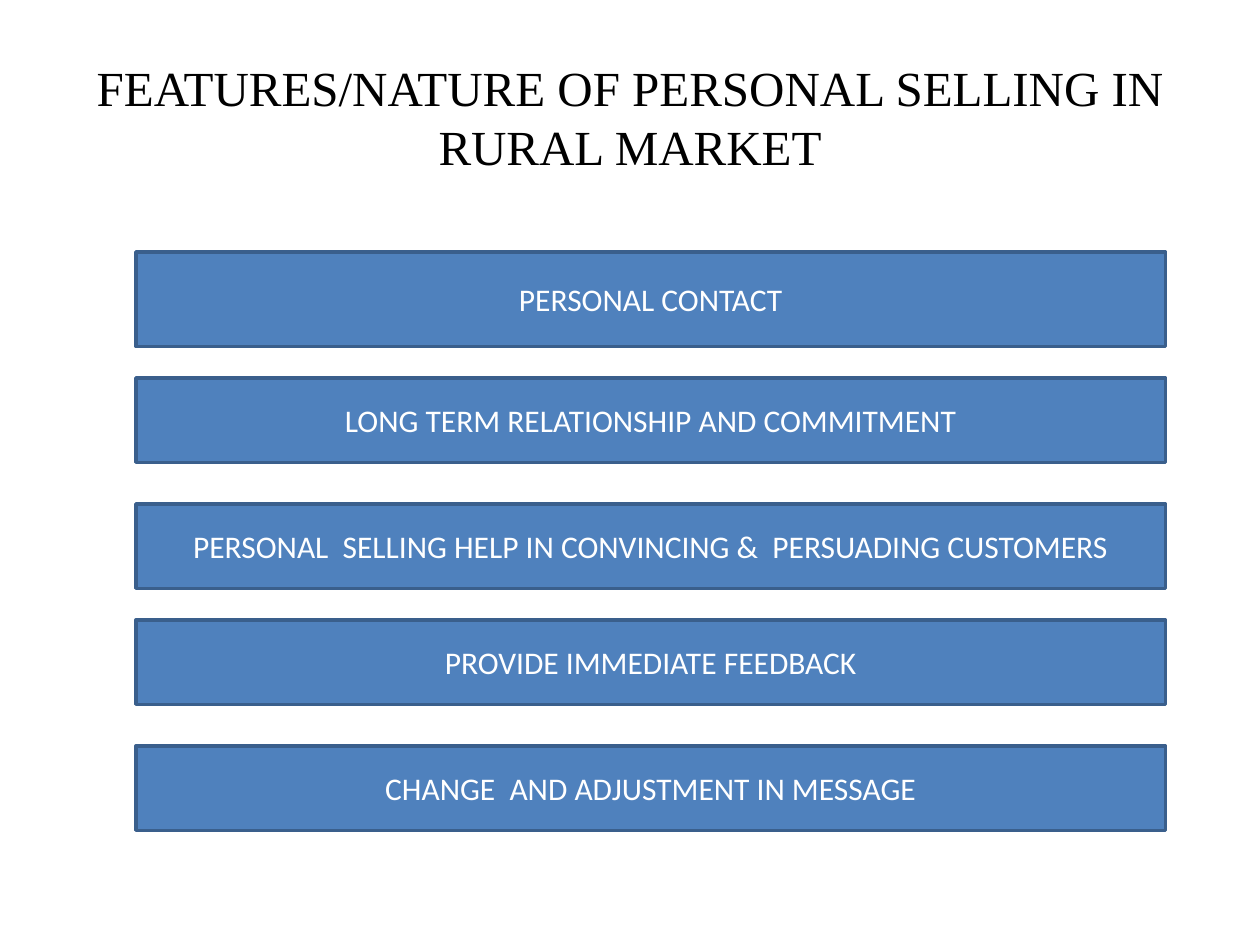
from dataclasses import dataclass

from pptx import Presentation
from pptx.dml.color import RGBColor
from pptx.enum.shapes import MSO_SHAPE as Shape
from pptx.enum.text import MSO_ANCHOR as Anchor, PP_ALIGN as Align
from pptx.slide import Slide
from pptx.util import Inches, Pt


def colour(value):
    return RGBColor.from_string(value)


@dataclass
class FeatureSlide:
    slide: Slide
    title_font: str = "Times New Roman"
    title_size: int = 28
    title_colour: str = "000000"
    bar_font: str = "Calibri"
    bar_size: int = 18
    bar_text: str = "FFFFFF"
    bar_fill: str = "4F81BD"
    bar_line: str = "3A5F8C"

    def label(self, holder, text, font, size, ink):
        frame = holder.text_frame
        frame.word_wrap = True
        frame.vertical_anchor = Anchor.MIDDLE
        paragraph = frame.paragraphs[0]
        paragraph.text = text
        paragraph.alignment = Align.CENTER
        paragraph.font.name = font
        paragraph.font.size = Pt(size)
        paragraph.font.color.rgb = colour(ink)

    def title(self, text, left, top, width, height):
        heading = self.slide.shapes.add_textbox(
            Inches(left), Inches(top), Inches(width), Inches(height))
        self.label(heading, text, self.title_font, self.title_size, self.title_colour)

    def bar(self, text, left, top, width, height):
        feature = self.slide.shapes.add_shape(
            Shape.RECTANGLE, Inches(left), Inches(top), Inches(width), Inches(height))
        feature.shadow.inherit = False
        feature.fill.solid()
        feature.fill.fore_color.rgb = colour(self.bar_fill)
        feature.line.color.rgb = colour(self.bar_line)
        feature.line.width = Pt(2)
        self.label(feature, text, self.bar_font, self.bar_size, self.bar_text)


FEATURES = [
    ("PERSONAL CONTACT", 2, 0.75),
    ("LONG TERM RELATIONSHIP AND COMMITMENT", 3, 0.67),
    ("PERSONAL  SELLING HELP IN CONVINCING &  PERSUADING CUSTOMERS", 4, 0.67),
    ("PROVIDE IMMEDIATE FEEDBACK", 4.92, 0.67),
    ("CHANGE  AND ADJUSTMENT IN MESSAGE", 5.92, 0.67),
]


def main():
    deck = Presentation()
    deck.slide_width, deck.slide_height = Inches(10), Inches(7.5)
    page = FeatureSlide(deck.slides.add_slide(deck.slide_layouts[6]))
    page.title("FEATURES/NATURE OF PERSONAL SELLING IN RURAL MARKET", 0.5, 0.3, 9, 1.25)
    for feature, top, height in FEATURES:
        page.bar(feature, 1.08, top, 8.17, height)
    deck.save("out.pptx")


if __name__ == "__main__":
    main()
